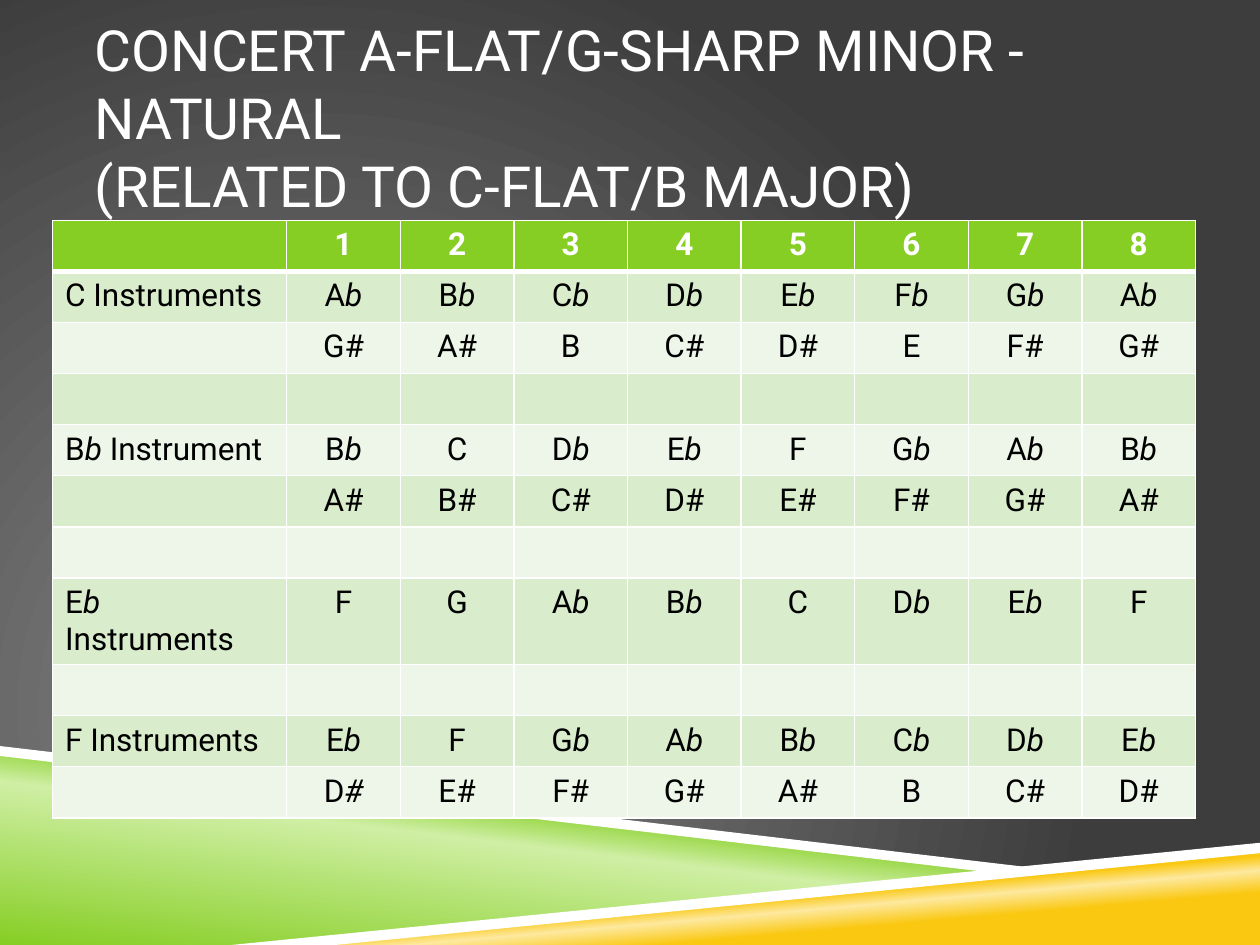
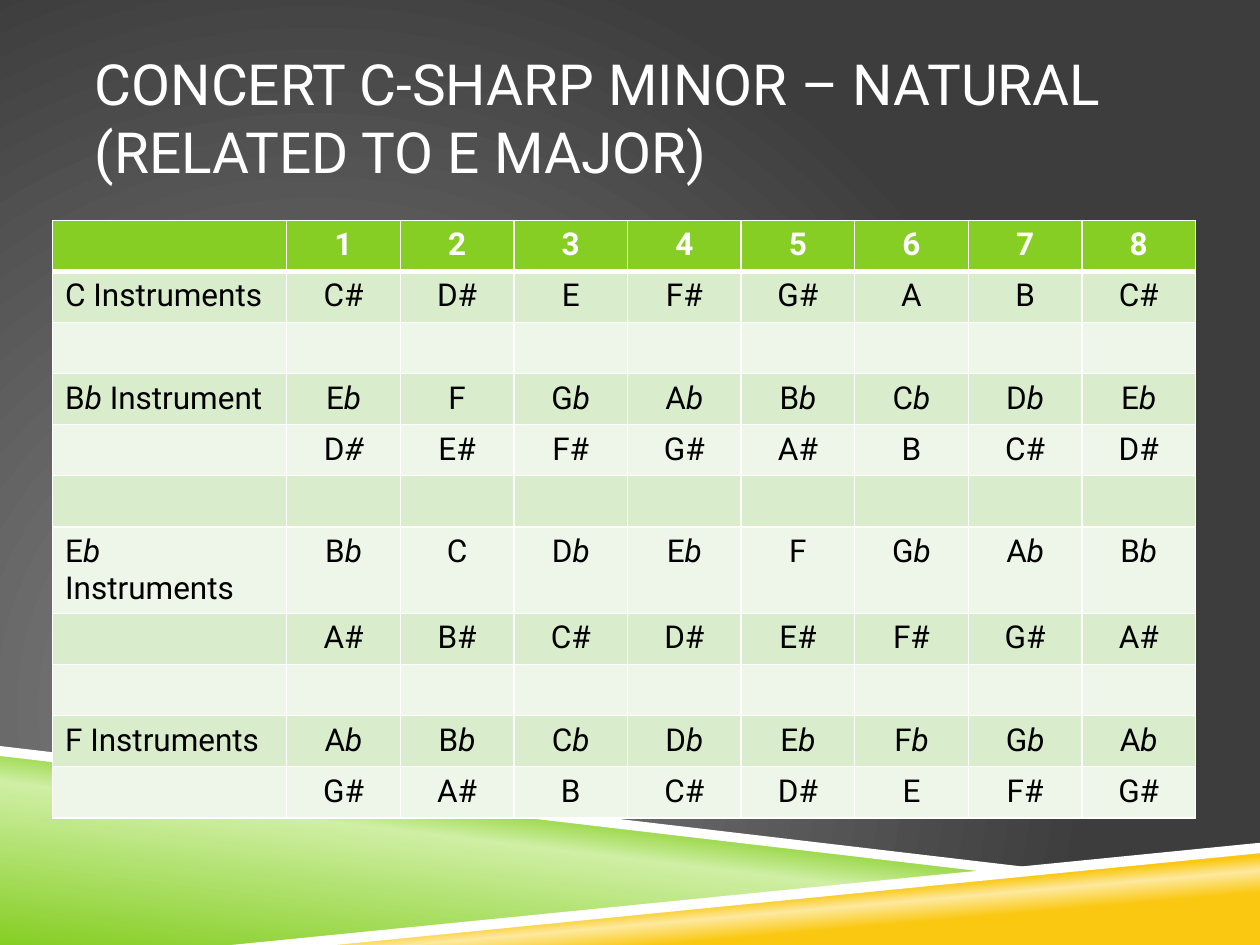
"""Builds two slides of natural minor scales for transposing instruments."""
from dataclasses import dataclass

from lxml import etree
from pptx import Presentation
from pptx import util as u
from pptx.dml.color import RGBColor
from pptx.enum import text
from pptx.oxml.ns import qn


@dataclass(frozen=True)
class Theme:
    """Holds the colours and type sizes."""
    font: str = "Roboto"
    white: str = "FFFFFF"
    black: str = "000000"
    green: str = "86CE24"
    pale_green: str = "CFEFA4"
    gold: str = "FAC810"
    pale_gold: str = "FDE99F"
    glow: str = "878787"
    charcoal: str = "3D3D3D"
    row_fills: tuple = ("D9EDCD", "EDF6E8")
    title_size: float = 32.4
    table_size: float = 18
    border: float = 1
    header_border: float = 3


A_FLAT = "Ab Bb Cb Db Eb Fb Gb Ab"
G_SHARP = "G# A# B C# D# E F# G#"
B_FLAT = "Bb C Db Eb F Gb Ab Bb"
A_SHARP = "A# B# C# D# E# F# G# A#"
E_FLAT = "Eb F Gb Ab Bb Cb Db Eb"
D_SHARP = "D*#* E# F# G# A# B C# D#"
C_SHARP = "C# D# E F# G# A B C#"
F_NATURAL = "F G Ab Bb C Db Eb F"
GAP = ("", "")

SCALE_SLIDES = [
    (("CONCERT A-FLAT/G-SHARP MINOR - NATURAL", "(RELATED TO C-FLAT/B MAJOR)"),
     [("C Instruments", A_FLAT), ("", G_SHARP), GAP,
      ("Bb Instrument", B_FLAT), ("", A_SHARP), GAP,
      ("Eb Instruments", F_NATURAL), GAP,
      ("F Instruments", E_FLAT), ("", D_SHARP)]),
    (("CONCERT C-SHARP MINOR – NATURAL", "(RELATED TO E MAJOR)"),
     [("C Instruments", C_SHARP), GAP,
      ("Bb Instrument", E_FLAT), ("", D_SHARP), GAP,
      ("Eb Instruments", B_FLAT), ("", A_SHARP), GAP,
      ("F Instruments", A_FLAT), ("", G_SHARP)]),
]


class Deck:
    """Draws styled elements on the current slide."""

    def __init__(self, theme):
        self.theme = theme
        self.presentation = Presentation()
        self.presentation.slide_width = u.Cm(25.4)
        self.presentation.slide_height = u.Cm(19.05)
        self.slide = None
        self.background()

    def gradient(self, fill, owner, stops, angle=None):
        """Fills with the stops, along an angle or in a circle."""
        fill.gradient()
        element = owner.find(".//" + qn("a:gradFill"))
        for child in list(element):
            element.remove(child)
        stop_list = etree.SubElement(element, qn("a:gsLst"))
        for position, color in stops:
            stop = etree.SubElement(stop_list, qn("a:gs"), pos=str(position * 1000))
            etree.SubElement(stop, qn("a:srgbClr"), val=color)
        if angle is None:
            circle = etree.SubElement(element, qn("a:path"), path="circle")
            etree.SubElement(circle, qn("a:fillToRect"),
                             l="50000", t="100000", r="100000", b="50000")
        else:
            etree.SubElement(element, qn("a:lin"), ang=str(angle * 60000), scaled="0")

    def background(self):
        """Gives every slide the circular grey glow."""
        master = self.presentation.slide_master
        self.gradient(master.background.fill, master.element,
                      [(0, self.theme.glow), (100, self.theme.charcoal)])

    def new_slide(self):
        """Starts a slide with its bands."""
        self.slide = self.presentation.slides.add_slide(self.presentation.slide_layouts[5])
        theme = self.theme
        self.band([(0, 15.16), (20.12, 17.58), (5.08, 19.05), (0, 19.05)],
                  [(0, theme.green), (52, theme.pale_green), (66, theme.green)], 277)
        self.band([(5.03, 19.05), (25.4, 17.07), (25.4, 19.05)],
                  [(28, theme.gold), (40, theme.pale_gold), (48, theme.gold)], 265)
        self.band([(0, 15.04), (0, 15.24), (20.07, 17.6), (21.13, 17.53)])
        self.band([(25.4, 16.99), (4.67, 19.05), (6.76, 19.05), (25.4, 17.2)])

    def band(self, points, stops=None, angle=0):
        """Adds a slanted band, white unless gradient stops are given."""
        start, *corners = [(u.Cm(x), u.Cm(y)) for x, y in points]
        builder = self.slide.shapes.build_freeform(*start)
        builder.add_line_segments(corners, close=True)
        shape = builder.convert_to_shape()
        shape.shadow.inherit = False
        shape.line.fill.background()
        if stops:
            self.gradient(shape.fill, shape.element.spPr, stops, angle)
        else:
            shape.fill.solid()
            shape.fill.fore_color.rgb = RGBColor.from_string(self.theme.white)

    def run(self, paragraph, words, size, color, bold=False, italic=False):
        """Adds one formatted run."""
        run = paragraph.add_run()
        run.text = words
        font = run.font
        font.name, font.size = self.theme.font, u.Pt(size)
        font.bold, font.italic = bold, italic
        font.color.rgb = RGBColor.from_string(color)

    def title(self, lines):
        """Fills the title placeholder."""
        shape = self.slide.shapes.title
        shape.left, shape.top = u.Cm(1.91), u.Cm(0.76)
        shape.width, shape.height = u.Cm(21.59), u.Cm(3.18)
        frame = shape.text_frame
        frame.word_wrap = True
        frame.auto_size = text.MSO_AUTO_SIZE.NONE
        frame.vertical_anchor = text.MSO_ANCHOR.MIDDLE
        frame.margin_left = frame.margin_right = 0
        frame.margin_top = frame.margin_bottom = u.Cm(0.13)
        paragraph = frame.paragraphs[0]
        paragraph.alignment = text.PP_ALIGN.LEFT
        for index, line in enumerate(lines):
            if index:
                paragraph.add_line_break()
            self.run(paragraph, line, self.theme.title_size, self.theme.white)

    def borders(self, cell, top, bottom):
        """Draws the four white borders of a cell."""
        properties = cell._tc.get_or_add_tcPr()
        widths = {"L": self.theme.border, "R": self.theme.border, "T": top, "B": bottom}
        for index, (side, width) in enumerate(widths.items()):
            line = etree.Element(qn(f"a:ln{side}"), w=str(u.Pt(width)))
            fill = etree.SubElement(line, qn("a:solidFill"))
            etree.SubElement(fill, qn("a:srgbClr"), val=self.theme.white)
            properties.insert(index, line)

    def cell(self, cell, words, row, column):
        """Styles a cell and sets accidentals in italics."""
        theme = self.theme
        header = row == 0
        cell.fill.solid()
        color = theme.green if header else theme.row_fills[(row - 1) % 2]
        cell.fill.fore_color.rgb = RGBColor.from_string(color)
        self.borders(cell, theme.header_border if row == 1 else theme.border,
                     theme.header_border if header else theme.border)
        paragraph = cell.text_frame.paragraphs[0]
        paragraph.font.size = u.Pt(theme.table_size)
        paragraph.font.name = theme.font
        if column:
            paragraph.alignment = text.PP_ALIGN.CENTER
        for index, part in enumerate(words.replace("b", "*b*").split("*")):
            if part:
                self.run(paragraph, part, theme.table_size,
                         theme.white if header else theme.black,
                         bold=header, italic=index % 2 == 1)

    def scale_table(self, scales):
        """Adds the table of scale degrees by instrument."""
        rows = [("", "1 2 3 4 5 6 7 8"), *scales]
        table = self.slide.shapes.add_table(len(rows), 9, u.Cm(1.06), u.Cm(4.44),
                                            u.Cm(23.01), u.Cm(11.33)).table
        for index, column in enumerate(table.columns):
            column.width = u.Cm(2.29 if index else 4.72)
        for row, (instrument, notes) in enumerate(rows):
            table.rows[row].height = u.Cm(1.03)
            words = [instrument, *(notes.split() or [""] * 8)]
            for column, word in enumerate(words):
                self.cell(table.cell(row, column), word, row, column)


def main():
    """Builds and saves the slides."""
    deck = Deck(Theme())
    for title, scales in SCALE_SLIDES:
        deck.new_slide()
        deck.title(title)
        deck.scale_table(scales)
    deck.presentation.save("out.pptx")


if __name__ == "__main__":
    main()
